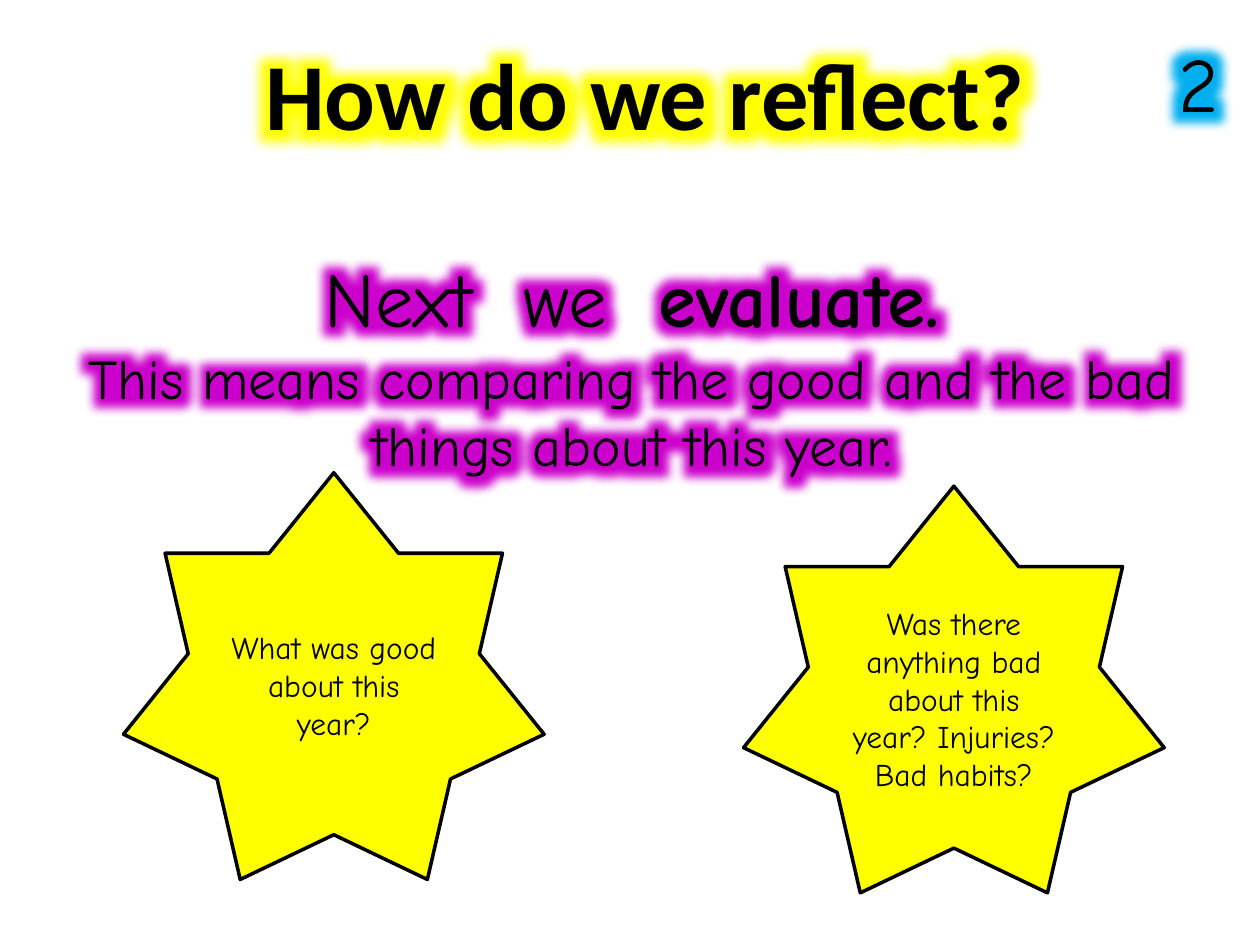
from dataclasses import dataclass

from lxml import etree
from pptx import Presentation
from pptx import util as u
from pptx.dml.color import RGBColor
from pptx.enum import shapes, text
from pptx.oxml.ns import qn


@dataclass(frozen=True)
class Theme:
    ink: str = "000000"
    yellow: str = "FFFF00"
    blue: str = "00B0F0"
    purple: str = "CC00CC"
    heading_font: str = "Calibri"
    body_font: str = "Comic Neue"
    title_size: int = 54
    lead_size: int = 44
    body_size: int = 32
    star_size: int = 18
    outline: int = 2
    glow_radius: float = 0.9


class SlideBuilder:
    def __init__(self, slide, theme):
        self.s = slide
        self.theme = theme

    def add_run(self, p, words, size, font=None, bold=False, glow=None):
        r = p.add_run()
        r.text = words
        r.font.size = u.Pt(size)
        r.font.bold = bold
        r.font.color.rgb = RGBColor.from_string(self.theme.ink)
        if glow:
            self.add_glow(r, glow)
        r.font.name = font or self.theme.body_font

    def add_glow(self, r, color):
        """Put a soft coloured halo behind the letters of a run."""
        effects = etree.SubElement(r._r.get_or_add_rPr(), qn("a:effectLst"))
        radius = str(int(u.Cm(self.theme.glow_radius)))
        glow = etree.SubElement(effects, qn("a:glow"), rad=radius)
        etree.SubElement(glow, qn("a:srgbClr"), val=color)

    def glowing_text(self, box, paragraphs, glow, align=text.PP_ALIGN.CENTER):
        """Each paragraph is a list of runs: (words, size, font, bold)."""
        tf = self.s.shapes.add_textbox(*map(u.Cm, box)).text_frame
        tf.word_wrap = True
        for i, runs in enumerate(paragraphs):
            p = tf.add_paragraph() if i else tf.paragraphs[0]
            p.alignment = align
            for run in runs:
                self.add_run(p, *run, glow=glow)

    def star(self, left, top, words):
        sp = self.s.shapes.add_shape(
            shapes.MSO_SHAPE.STAR_7_POINT,
            u.Cm(left), u.Cm(top), u.Cm(8.48), u.Cm(8.2))
        sp.shadow.inherit = False
        sp.fill.solid()
        sp.fill.fore_color.rgb = RGBColor.from_string(self.theme.yellow)
        sp.line.color.rgb = RGBColor.from_string(self.theme.ink)
        sp.line.width = u.Pt(self.theme.outline)
        tf = sp.text_frame
        tf.word_wrap = True
        tf.vertical_anchor = text.MSO_ANCHOR.MIDDLE
        tf.margin_top = u.Cm(0.89)
        p = tf.paragraphs[0]
        p.alignment = text.PP_ALIGN.CENTER
        self.add_run(p, words, self.theme.star_size)


def main():
    prs = Presentation()
    prs.slide_width, prs.slide_height = u.Cm(25.4), u.Cm(19.05)
    t = Theme()
    b = SlideBuilder(prs.slides.add_slide(prs.slide_layouts[6]), t)

    b.glowing_text(
        (1.3, 0.6, 23.4, 2.57),
        [[("How do we reflect?", t.title_size, t.heading_font, True)]],
        t.yellow)
    b.glowing_text(
        (23.5, 0.6, 1.22, 2.13), [[("2", t.lead_size)]],
        t.blue, text.PP_ALIGN.LEFT)
    b.glowing_text(
        (0.08, 4.93, 25.32, 4.88),
        [[("Next  we  ", t.lead_size),
          ("evaluate.", t.lead_size, t.body_font, True)],
         [("This means comparing the good and the bad things about this year.",
           t.body_size)]],
        t.purple)

    b.star(2.49, 9.53, "What was good about this year?")
    b.star(14.99, 9.8,
           "Was there anything bad about this year? Injuries? Bad habits?")
    prs.save("out.pptx")


if __name__ == "__main__":
    main()
